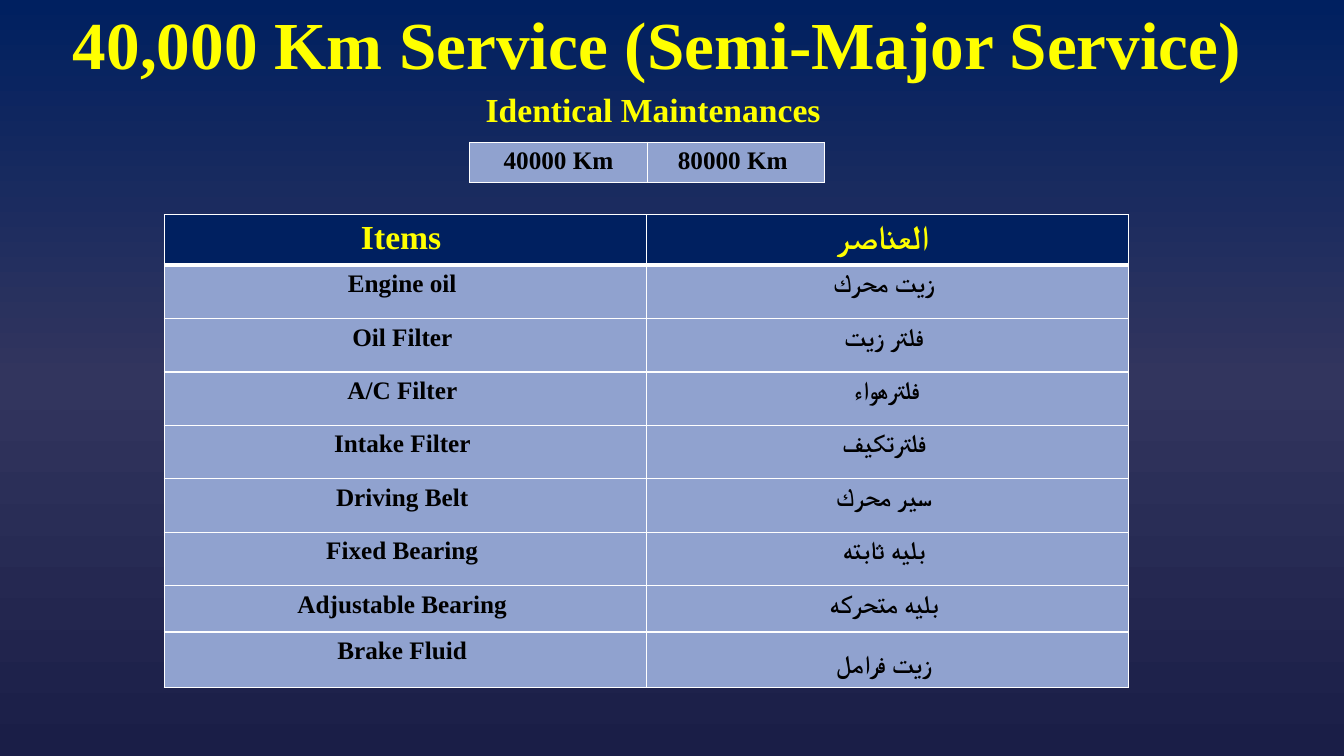
from copy import deepcopy

from lxml.etree import SubElement
from pptx import Presentation
from pptx.dml.color import RGBColor
from pptx.enum.text import MSO_ANCHOR, PP_ALIGN
from pptx.oxml import parse_xml
from pptx.oxml.ns import nsdecls, qn
from pptx.util import Inches, Pt

FONT = "Times New Roman"
YELLOW = RGBColor(0xFF, 0xFF, 0x00)
BLACK = RGBColor(0x00, 0x00, 0x00)
WHITE = RGBColor(0xFF, 0xFF, 0xFF)
NAVY = RGBColor(0x00, 0x20, 0x60)
PERIWINKLE = RGBColor(0x90, 0xA2, 0xCF)
BACKGROUND = [(0, NAVY), (0.5, RGBColor(0x32, 0x35, 0x5E)),
              (1, RGBColor(0x1A, 0x1E, 0x47))]

INTERVALS = [("40000 Km", "80000 Km ")]
ITEMS = [
    ("Items ", "العناصر "),
    ("Engine oil ", "زيت محرك "),
    ("Oil Filter ", "فلتر زيت "),
    ("A/C Filter ", "فلترهواء"),
    ("Intake Filter ", "فلترتكيف "),
    ("Driving Belt ", "سير محرك "),
    ("Fixed Bearing ", "بليه ثابته "),
    ("Adjustable Bearing ", "بليه متحركه "),
    ("Brake Fluid ", "زيت فرامل "),
]
ITEM_HEIGHTS = [0.49] + [0.53] * 6 + [0.46, 0.53]


def paint_background(page):
    fill = page.background.fill
    fill.gradient()
    fill.gradient_angle = 270
    stop_list = page.element.find(".//" + qn("a:gsLst"))
    stop_list.insert(1, deepcopy(stop_list[0]))
    for stop, (position, color) in zip(fill.gradient_stops, BACKGROUND):
        stop.position = position
        stop.color.rgb = color


def write_text(frame, text, size, color):
    frame.text = text
    paragraph = frame.paragraphs[0]
    paragraph.alignment = PP_ALIGN.CENTER
    for span in paragraph.runs:
        span.font.name = FONT
        span.font.size = Pt(size)
        span.font.bold = True
        span.font.color.rgb = color
        # Typeface for Arabic script
        SubElement(span.font._element, qn("a:cs"), typeface=FONT)
    return paragraph


def add_heading(page, text, left, top, width, height, size):
    box = page.shapes.add_textbox(
        Inches(left), Inches(top), Inches(width), Inches(height))
    frame = box.text_frame
    frame.word_wrap = True
    frame.vertical_anchor = MSO_ANCHOR.MIDDLE
    return write_text(frame, text, size, YELLOW)


def set_borders(cell, widths):
    properties = cell._tc.get_or_add_tcPr()
    for index, (side, width) in enumerate(widths.items()):
        properties.insert(index, parse_xml(
            f'<a:ln{side} {nsdecls("a")} w="{Pt(width)}"><a:solidFill>'
            f'<a:srgbClr val="{WHITE}"/></a:solidFill></a:ln{side}>'))


def add_grid(page, rows, left, top, column_width, heights, has_header=False):
    columns = len(rows[0])
    table = page.shapes.add_table(
        len(rows), columns, Inches(left), Inches(top),
        Inches(column_width * columns), Inches(sum(heights))).table
    table.first_row = has_header
    table.horz_banding = False
    for column in table.columns:
        column.width = Inches(column_width)
    for index, (texts, height) in enumerate(zip(rows, heights)):
        table.rows[index].height = Inches(height)
        header = has_header and index == 0
        below_header = has_header and index == 1
        size, color, fill = (24, YELLOW, NAVY) if header else (18, BLACK, PERIWINKLE)
        borders = {"L": 1, "R": 1, "T": 3 if below_header else 1,
                   "B": 3 if header else 1}
        for cell, text in zip(table.rows[index].cells, texts):
            write_text(cell.text_frame, text, size, color)
            cell.fill.solid()
            cell.fill.fore_color.rgb = fill
            set_borders(cell, borders)
    return table


def main():
    deck = Presentation()
    deck.slide_width, deck.slide_height = Inches(13.33), Inches(7.5)
    page = deck.slides.add_slide(deck.slide_layouts[6])
    paint_background(page)

    # Headings
    title = add_heading(page, "40,000 Km Service (Semi-Major Service)",
                        0.49, 0.22, 12.06, 0.51, 48)
    title.line_spacing = 0.9
    add_heading(page, "Identical Maintenances ", 3.79, 0.83, 5.46, 0.5, 24)

    # Service items, with the last Arabic entry set lower
    items = add_grid(page, ITEMS, 1.63, 2.13, 4.78, ITEM_HEIGHTS, has_header=True)
    items.cell(len(ITEMS) - 1, 1).text_frame.paragraphs[0].line_spacing = 1.5

    # Service intervals
    add_grid(page, INTERVALS, 4.66, 1.41, 1.76, [0.4])

    deck.save("out.pptx")


if __name__ == "__main__":
    main()
